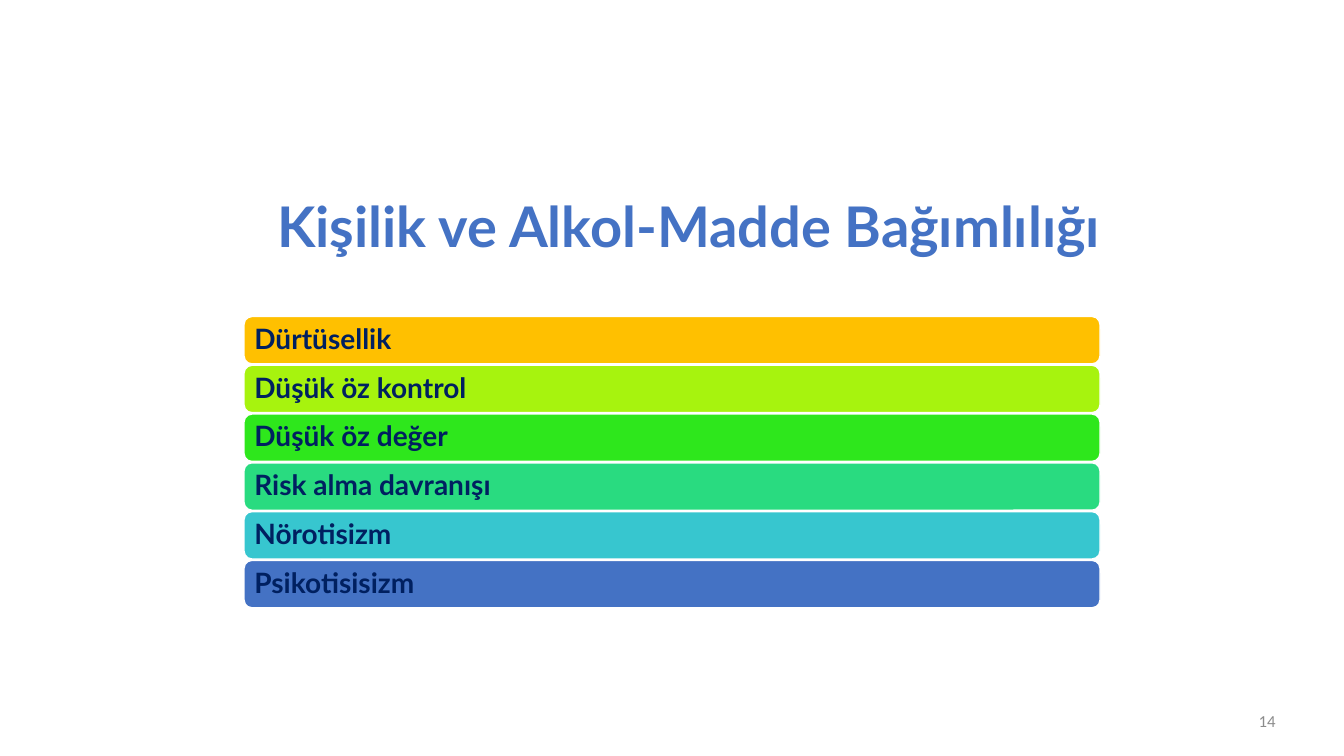
import pptx
import pptx.util
import pptx.dml.color
import pptx.enum.shapes
import pptx.enum.text

Inches = pptx.util.Inches
RGBColor = pptx.dml.color.RGBColor
ALIGN = pptx.enum.text.PP_ALIGN
ANCHOR = pptx.enum.text.MSO_ANCHOR

BLUE = RGBColor(0x44, 0x72, 0xC4)
NAVY = RGBColor(0x00, 0x20, 0x60)
GRAY = RGBColor(0x8C, 0x8C, 0x8C)
WHITE = RGBColor(0xFF, 0xFF, 0xFF)
AMBER = RGBColor(0xFF, 0xC0, 0x00)
LIME = RGBColor(0xA7, 0xF3, 0x0E)
GREEN = RGBColor(0x2E, 0xE7, 0x1C)
MINT = RGBColor(0x29, 0xDB, 0x80)
TURQUOISE = RGBColor(0x37, 0xC6, 0xCF)


def write(tf, text, size, color, font="Lato", bold=False, align=ALIGN.LEFT,
          anchor=ANCHOR.MIDDLE, spacing=None):
    tf.word_wrap = True
    tf.auto_size = pptx.enum.text.MSO_AUTO_SIZE.NONE
    tf.vertical_anchor = anchor
    p = tf.paragraphs[0]
    p.alignment = align
    p.line_spacing = spacing
    r = p.add_run()
    r.text = text
    r.font.name = font
    r.font.size = pptx.util.Pt(size)
    r.font.bold = bold
    r.font.color.rgb = color


class Deck:
    def __init__(self):
        self.prs = pptx.Presentation()
        self.prs.slide_width = Inches(13.33)
        self.prs.slide_height = Inches(7.5)
        self.s = self.prs.slides.add_slide(self.prs.slide_layouts[5])

    def title(self, text, left, top, width, height, bottom_inset):
        sp = self.s.shapes.title
        sp.left, sp.top = Inches(left), Inches(top)
        sp.width, sp.height = Inches(width), Inches(height)
        sp.text_frame.margin_bottom = Inches(bottom_inset)
        write(sp.text_frame, text, 40, BLUE, bold=True, align=ALIGN.CENTER,
              anchor=ANCHOR.BOTTOM, spacing=0.9)

    def bar(self, text, color, left, top, width, height):
        sp = self.s.shapes.add_shape(
            pptx.enum.shapes.MSO_SHAPE.ROUNDED_RECTANGLE,
            Inches(left), Inches(top), Inches(width), Inches(height))
        sp.shadow.inherit = False
        sp.fill.solid()
        sp.fill.fore_color.rgb = color
        sp.line.color.rgb = WHITE
        sp.line.width = pptx.util.Pt(1)
        tf = sp.text_frame
        tf.margin_left = tf.margin_right = Inches(0.08)
        tf.margin_top = tf.margin_bottom = Inches(0.05)
        write(tf, text, 20, NAVY, bold=True, spacing=0.9)

    def page_number(self, text, left, top, width, height):
        sp = self.s.shapes.add_textbox(
            Inches(left), Inches(top), Inches(width), Inches(height))
        write(sp.text_frame, text, 12, GRAY, font="Calibri", align=ALIGN.RIGHT)


def main():
    deck = Deck()

    # Title
    deck.title("Kişilik ve Alkol-Madde Bağımlılığı", 1.83, 1.35, 10, 2.3, 1.07)

    # Personality traits, evenly stacked
    traits = [
        ("Dürtüsellik", AMBER),
        ("Düşük öz kontrol", LIME),
        ("Düşük öz değer", GREEN),
        ("Risk alma davranışı", MINT),
        ("Nörotisizm", TURQUOISE),
        ("Psikotisisizm", BLUE),
    ]
    first_top, last_top = 3.14, 5.56
    pitch = (last_top - first_top) / (len(traits) - 1)
    for i, (trait, color) in enumerate(traits):
        deck.bar(trait, color, 2.42, first_top + i * pitch, 8.49, 0.47)

    # Page number
    deck.page_number("14", 9.75, 6.95, 3, 0.4)

    deck.prs.save("out.pptx")


if __name__ == "__main__":
    main()
